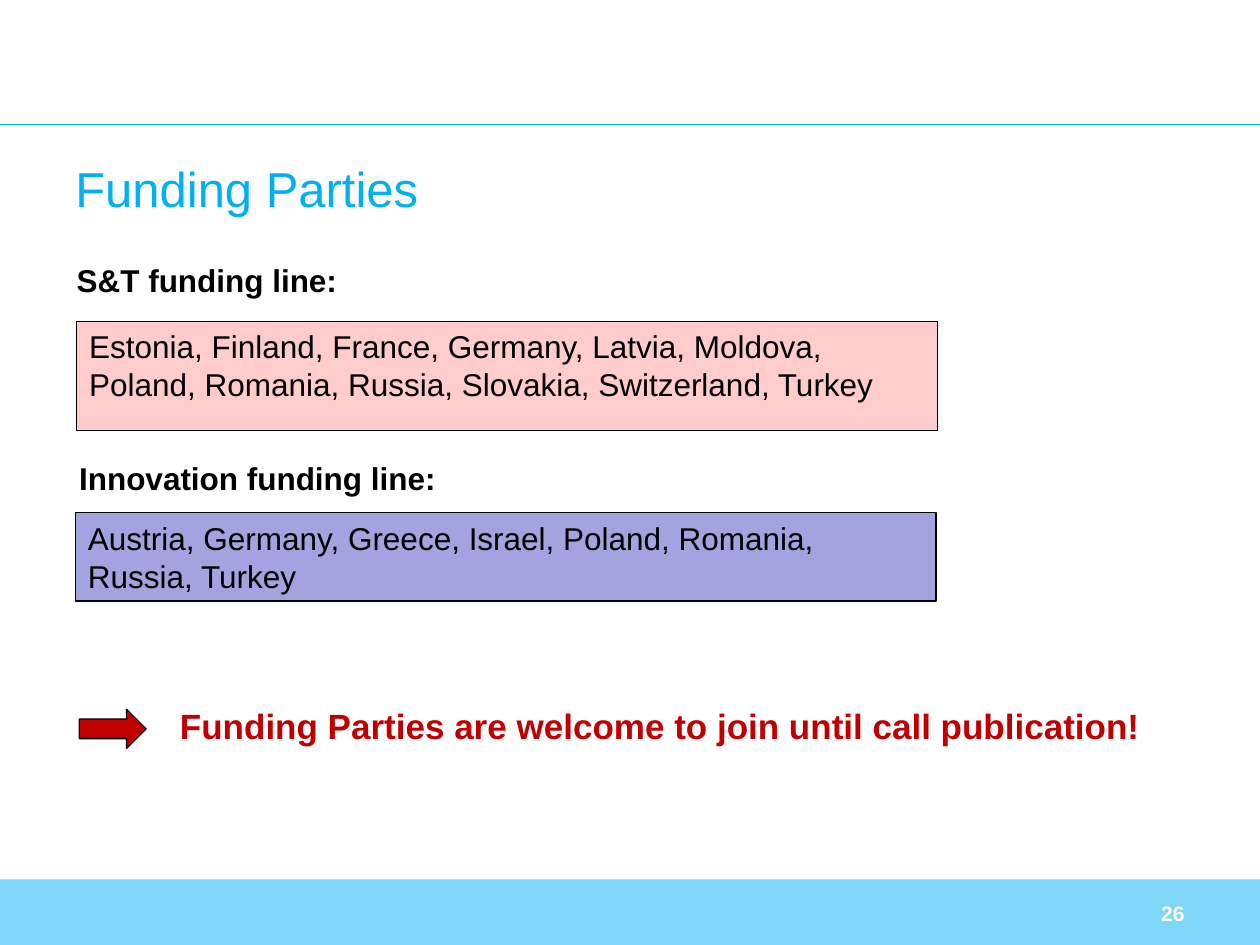
from lxml import etree
from pptx import Presentation
from pptx.dml.color import RGBColor
from pptx.enum.shapes import MSO_CONNECTOR, MSO_SHAPE
from pptx.enum.text import MSO_ANCHOR, PP_ALIGN
from pptx.oxml.ns import qn
from pptx.util import Inches, Pt

RECTANGLE = MSO_SHAPE.RECTANGLE
RIGHT_ARROW = MSO_SHAPE.RIGHT_ARROW
STRAIGHT = MSO_CONNECTOR.STRAIGHT
TOP, MIDDLE = MSO_ANCHOR.TOP, MSO_ANCHOR.MIDDLE
LEFT, RIGHT = PP_ALIGN.LEFT, PP_ALIGN.RIGHT

BLACK = RGBColor(0x00, 0x00, 0x00)
WHITE = RGBColor(0xFF, 0xFF, 0xFF)
SKY = RGBColor(0x00, 0xB0, 0xF0)
RED = RGBColor(0xC0, 0x00, 0x00)
PINK = RGBColor(0xFF, 0xCC, 0xCC)
LAVENDER = RGBColor(0xA3, 0xA3, 0xE0)


def write(shape, text, size, color, bold=False, align=LEFT, anchor=TOP, wrap=True):
    frame = shape.text_frame
    frame.word_wrap = wrap
    frame.vertical_anchor = anchor
    para = frame.paragraphs[0]
    para.text = text
    para.alignment = align
    para.font.name = "Arial"
    para.font.size = Pt(size)
    para.font.bold = bold
    para.font.color.rgb = color


def add_text(page, box, text, size, color, **style):
    label = page.shapes.add_textbox(*map(Inches, box))
    write(label, text, size, color, **style)
    return label


def add_filled(page, kind, box, fill, outlined=True):
    shape = page.shapes.add_shape(kind, *map(Inches, box))
    shape.shadow.inherit = False
    shape.fill.solid()
    shape.fill.fore_color.rgb = fill
    if outlined:
        shape.line.color.rgb = BLACK
        shape.line.width = Pt(0.75)
    else:
        shape.line.fill.background()
    return shape


def add_header(page, box):
    left, top, width, height = box
    rule = page.shapes.add_connector(
        STRAIGHT, Inches(left), Inches(top), Inches(left + width), Inches(top))
    rule.line.color.rgb = SKY
    rule.line.width = Pt(0.75)
    etree.SubElement(rule._element.spPr, qn("a:effectLst"))
    title = add_text(page, (left + 0.5, top + 0.09, width - 1, height - 0.09),
                     "Funding Parties", 28, SKY)
    title.text_frame.margin_top = Inches(0.18)


def add_footer(page, box, number):
    left, top, width, height = box
    band = add_filled(page, RECTANGLE, box, SKY, outlined=False)
    color = band._element.spPr.find(qn("a:solidFill"))[0]
    etree.SubElement(color, qn("a:alpha"), val="50000")
    add_text(page, (left + width - 2.83, top + 0.07, 2.33, 0.4), number, 12, WHITE,
             bold=True, align=RIGHT, anchor=MIDDLE)


def add_funding_line(page, label_box, heading, country_box, countries, fill):
    add_text(page, label_box, heading, 18, BLACK, bold=True, wrap=False)
    panel = add_filled(page, RECTANGLE, country_box, fill)
    write(panel, countries, 18, BLACK)


def add_invitation(page, box):
    left, top, width, height = box
    add_filled(page, RIGHT_ARROW, (left, top + 0.09, 0.53, 0.31), RED)
    add_text(page, (left + 0.7, top, width - 0.7, height),
             "Funding Parties are welcome to join until call publication!",
             20, RED, bold=True)


def main():
    deck = Presentation()
    deck.slide_width, deck.slide_height = Inches(10), Inches(7.5)
    page = deck.slides.add_slide(deck.slide_layouts[6])
    add_footer(page, (0, 6.98, 10, 0.52), "26")
    add_header(page, (0, 0.99, 10, 1.34))
    add_funding_line(
        page, (0.51, 2.02, 2.29, 0.4), "S&T funding line:", (0.61, 2.55, 6.83, 0.87),
        "Estonia, Finland, France, Germany, Latvia, Moldova, "
        "Poland, Romania, Russia, Slovakia, Switzerland, Turkey", PINK)
    add_funding_line(
        page, (0.53, 3.59, 3.06, 0.4), "Innovation funding line:", (0.6, 4.07, 6.83, 0.7),
        "Austria, Germany, Greece, Israel, Poland, Romania, Russia, Turkey", LAVENDER)
    add_invitation(page, (0.63, 5.54, 8.65, 0.81))
    deck.save("out.pptx")


if __name__ == "__main__":
    main()
